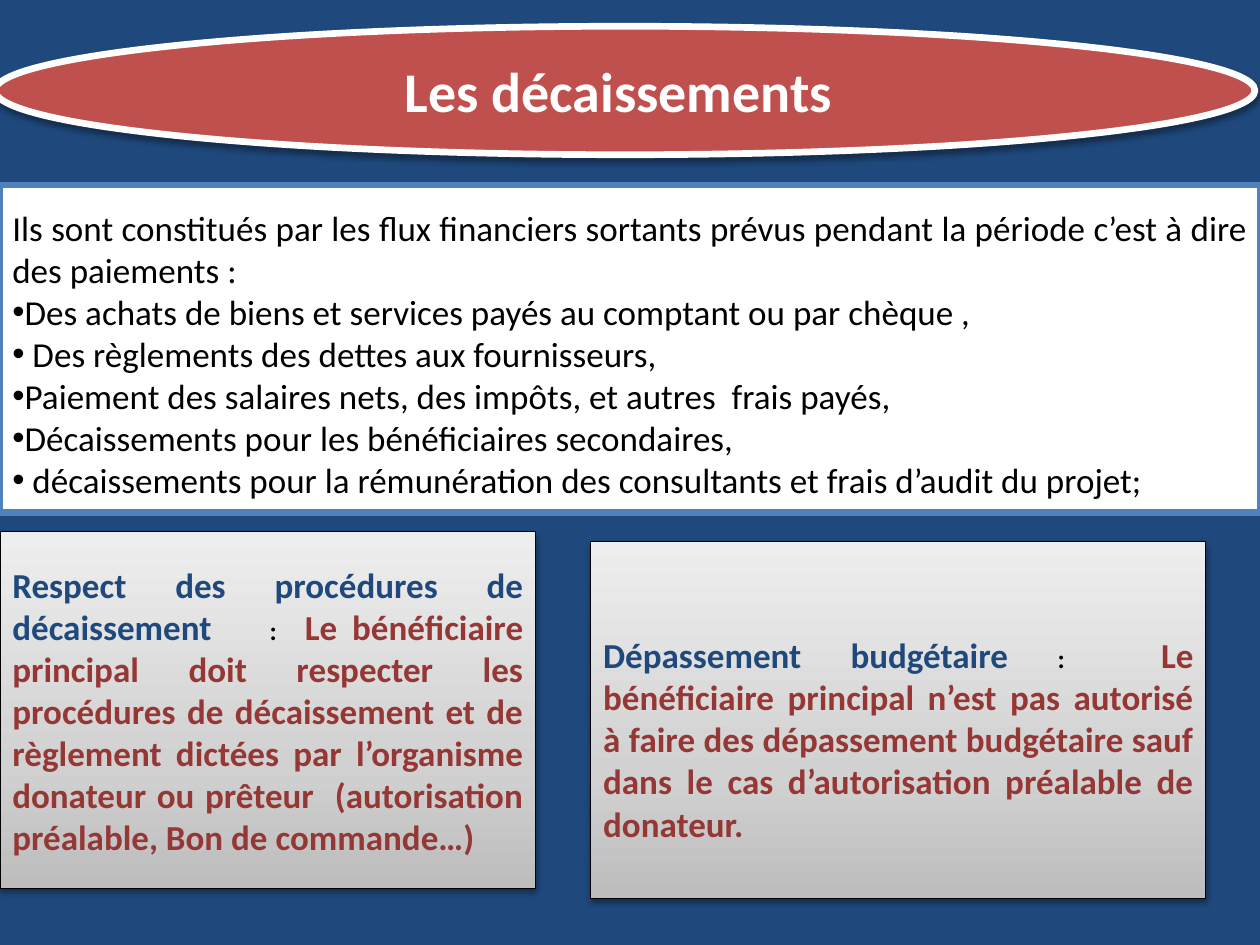
"""Build the slide on disbursements with its title, definition and two rules."""
import copy

import pptx
import pptx.dml.color
import pptx.enum.shapes
import pptx.enum.text
import pptx.oxml
import pptx.oxml.ns
import pptx.util

Cm = pptx.util.Cm
Pt = pptx.util.Pt
RGBColor = pptx.dml.color.RGBColor
ShapeType = pptx.enum.shapes.MSO_SHAPE
Align = pptx.enum.text.PP_ALIGN

NAVY = RGBColor(0x1F, 0x49, 0x7D)
BLUE = RGBColor(0x4F, 0x81, 0xBD)
RED = RGBColor(0xC0, 0x50, 0x4D)
DARK_RED = RGBColor(0x95, 0x37, 0x35)
WHITE = RGBColor(0xFF, 0xFF, 0xFF)
BLACK = RGBColor(0x00, 0x00, 0x00)
GREY_STOPS = [
    (0, RGBColor(0xBD, 0xBD, 0xBD)),
    (0.35, RGBColor(0xD1, 0xD1, 0xD1)),
    (1, RGBColor(0xEE, 0xEE, 0xEE)),
]
FONT = "Calibri"
NAMESPACE = pptx.oxml.ns.nsdecls("a")

DEFINITION = (
    "Ils sont constitués par les flux financiers sortants prévus pendant "
    "la période c’est à dire des paiements : "
)
PAYMENTS = [
    "Des achats de biens et services payés au comptant ou par chèque , ",
    " Des règlements des dettes aux fournisseurs,",
    "Paiement des salaires nets, des impôts, et autres  frais payés,",
    "Décaissements pour les bénéficiaires secondaires, ",
    " décaissements pour la rémunération des consultants et frais d’audit du projet;",
]
PROCEDURES = (
    " Le bénéficiaire principal doit respecter les procédures de décaissement "
    "et de règlement dictées par l’organisme donateur ou prêteur  "
    "(autorisation préalable, Bon de commande…)"
)
OVERRUN = (
    " Le bénéficiaire principal n’est pas autorisé à faire des dépassement "
    "budgétaire sauf dans le cas d’autorisation préalable de donateur."
)


def write(paragraph, text, size=20, color=BLACK, bold=False, align=Align.JUSTIFY):
    paragraph.alignment = align
    run = paragraph.add_run()
    run.text = text
    run.font.name = FONT
    run.font.size = Pt(size)
    run.font.bold = bold
    run.font.color.rgb = color


class SlideBuilder:
    def __init__(self, slide):
        self.slide = slide
        slide.background.fill.solid()
        slide.background.fill.fore_color.rgb = NAVY

    def panel(self, kind, left, top, width, height, line, line_width, fill=None, shadow=True):
        shape = self.slide.shapes.add_shape(kind, Cm(left), Cm(top), Cm(width), Cm(height))
        if fill is None:
            self.grey_gradient(shape.fill)
        else:
            shape.fill.solid()
            shape.fill.fore_color.rgb = fill
        shape.line.color.rgb = line
        shape.line.width = Pt(line_width)
        shape.shadow.inherit = False
        if shadow:
            self.drop_shadow(shape)
        shape.text_frame.word_wrap = True
        shape.text_frame.vertical_anchor = pptx.enum.text.MSO_ANCHOR.MIDDLE
        return shape

    def grey_gradient(self, fill):
        fill.gradient()
        fill.gradient_angle = 90
        stops = fill.gradient_stops
        first = stops[0].color.rgb = GREY_STOPS[0][1]
        element = fill._xPr.find(".//" + pptx.oxml.ns.qn("a:gs"))
        element.addnext(copy.deepcopy(element))
        for stop, (position, color) in zip(fill.gradient_stops, GREY_STOPS):
            stop.position = position
            stop.color.rgb = color

    def drop_shadow(self, shape):
        effects = shape._element.spPr.find(pptx.oxml.ns.qn("a:effectLst"))
        effects.append(pptx.oxml.parse_xml(
            f'<a:outerShdw {NAMESPACE} blurRad="{Pt(3.5)}" dist="{Pt(2)}" dir="5400000" '
            'rotWithShape="0"><a:srgbClr val="000000"><a:alpha val="38000"/>'
            '</a:srgbClr></a:outerShdw>'
        ))

    def bullet(self, frame, text):
        paragraph = frame.add_paragraph()
        write(paragraph, text)
        properties = paragraph._p.get_or_add_pPr()
        properties.append(pptx.oxml.parse_xml(f'<a:buFont {NAMESPACE} typeface="Arial"/>'))
        properties.append(pptx.oxml.parse_xml(f'<a:buChar {NAMESPACE} char="•"/>'))

    def title(self, text):
        shape = self.panel(ShapeType.OVAL, -0.1, 0.53, 25.4, 2.59, WHITE, 3.82, RED)
        write(shape.text_frame.paragraphs[0], text, size=32, color=WHITE, bold=True,
              align=Align.CENTER)

    def definition(self, introduction, items):
        shape = self.panel(ShapeType.RECTANGLE, 0, 3.73, 25.4, 6.6, BLUE, 3.78, WHITE,
                           shadow=False)
        frame = shape.text_frame
        frame.margin_top = Cm(0.33)
        write(frame.paragraphs[0], introduction)
        for item in items:
            self.bullet(frame, item)

    def rule(self, left, top, width, heading, colon, body, margin_top):
        shape = self.panel(ShapeType.RECTANGLE, left, top, width, 7.19, BLACK, 0.5)
        shape.text_frame.margin_top = Cm(margin_top)
        paragraph = shape.text_frame.paragraphs[0]
        write(paragraph, heading, color=NAVY, bold=True)
        write(paragraph, colon, size=15, bold=True)
        write(paragraph, body, color=DARK_RED, bold=True)


def main():
    presentation = pptx.Presentation()
    presentation.slide_width = Cm(25.4)
    presentation.slide_height = Cm(19.05)
    builder = SlideBuilder(presentation.slides.add_slide(presentation.slide_layouts[6]))
    builder.title("Les décaissements ")
    builder.definition(DEFINITION, PAYMENTS)
    builder.rule(0, 10.72, 10.8, "Respect des procédures de décaissement   ", " : ",
                 PROCEDURES, margin_top=0.13)
    builder.rule(11.91, 10.92, 12.4, "Dépassement budgétaire ", ": ", OVERRUN,
                 margin_top=0.89)
    presentation.save("out.pptx")


if __name__ == "__main__":
    main()
